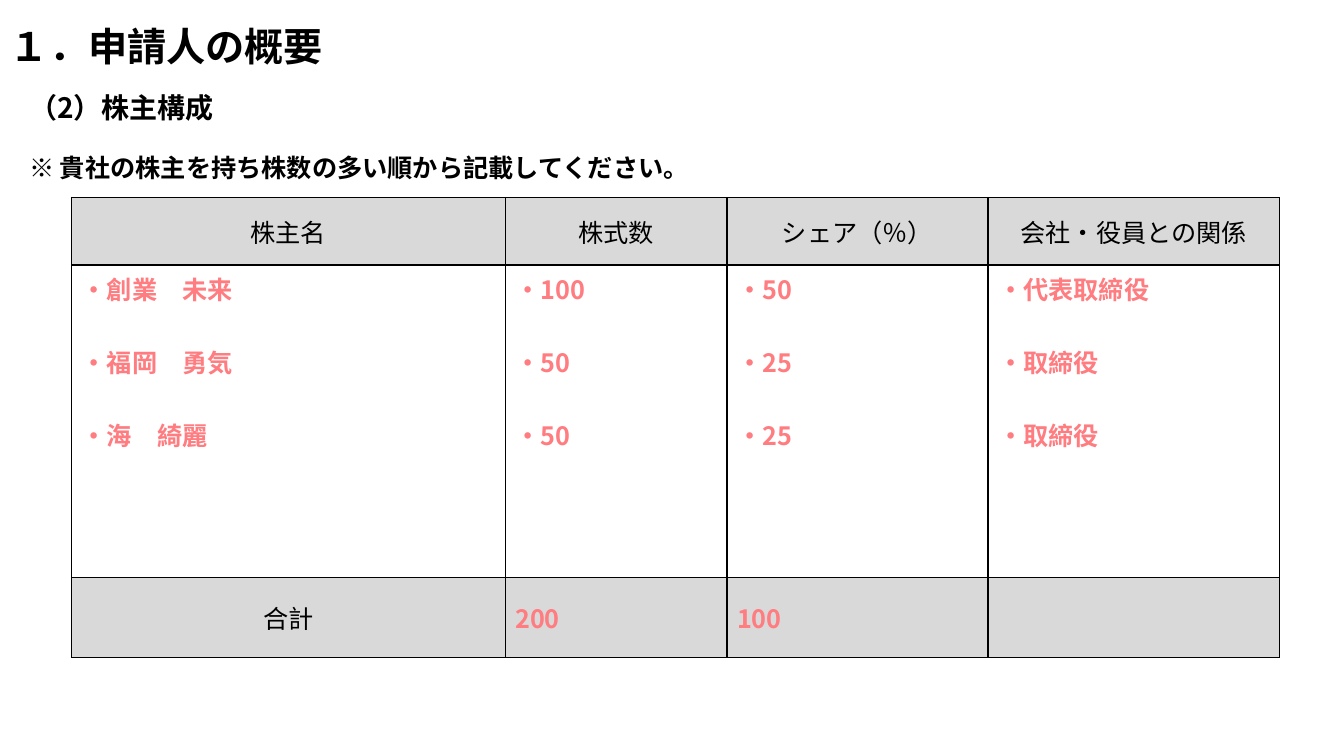
from lxml.etree import SubElement
from pptx import Presentation
from pptx.dml.color import RGBColor
from pptx.enum.text import MSO_ANCHOR, PP_ALIGN
from pptx.oxml.ns import qn
from pptx.util import Inches, Pt

FONT = "Noto Sans CJK JP"
COLORS = {"ink": "000000", "entry": "FF7C80", "band": "D9D9D9"}

TITLE = "１．申請人の概要"
SUBTITLE = "（2）株主構成"
INSTRUCTION = "※ 貴社の株主を持ち株数の多い順から記載してください。"
HEADERS = ["株主名", "株式数", "シェア（％）", "会社・役員との関係"]
SHAREHOLDERS = [
    ("創業　未来", "100", "50", "代表取締役"),
    ("福岡　勇気", "50", "25", "取締役"),
    ("海　綺麗", "50", "25", "取締役"),
]
TOTALS = ["合計", "200", "100", ""]
COLUMN_WIDTHS = [4.3, 2.2, 2.59, 2.89]
ROW_HEIGHTS = [0.67, 3.1, 0.79]


def write(frame, lines, size, color, bold, align=PP_ALIGN.LEFT, gap=0):
    for index, line in enumerate(lines):
        paragraph = frame.paragraphs[0] if index == 0 else frame.add_paragraph()
        paragraph.text = line
        paragraph.alignment = align
        if index:
            paragraph.space_before = Pt(gap)
        font = paragraph.font
        font.name, font.size, font.bold = FONT, Pt(size), bold
        font.color.rgb = RGBColor.from_string(COLORS[color])
        for run in paragraph.runs:
            run.font.name = FONT
            SubElement(run.font._element, qn("a:ea"), typeface=FONT)


def add_heading(slide, left, top, width, height, anchor):
    frame = slide.shapes.add_textbox(
        Inches(left), Inches(top), Inches(width), Inches(height)).text_frame
    frame.word_wrap = True
    frame.vertical_anchor = anchor
    return frame


def draw_borders(cell):
    properties = cell._tc.get_or_add_tcPr()
    for index, side in enumerate(("lnL", "lnR", "lnT", "lnB")):
        border = properties.makeelement(qn(f"a:{side}"), {"w": str(Pt(1))})
        fill = SubElement(border, qn("a:solidFill"))
        SubElement(fill, qn("a:srgbClr"), val=COLORS["ink"])
        properties.insert(index, border)


def add_shareholder_table(slide):
    table = slide.shapes.add_table(
        len(ROW_HEIGHTS), len(COLUMN_WIDTHS), Inches(0.71), Inches(1.96),
        Inches(sum(COLUMN_WIDTHS)), Inches(sum(ROW_HEIGHTS))).table
    table.first_row = table.horz_banding = False
    for column, width in zip(table.columns, COLUMN_WIDTHS):
        column.width = Inches(width)
    for row, height in zip(table.rows, ROW_HEIGHTS):
        row.height = Inches(height)

    entries = [[f"・{value}" for value in field] for field in zip(*SHAREHOLDERS)]
    rows = [[[header] for header in HEADERS], entries, [[total] for total in TOTALS]]
    for r, row in enumerate(rows):
        for c, lines in enumerate(row):
            cell = table.cell(r, c)
            is_body = r == 1
            is_label = r == 0 or (r == 2 and c == 0)
            if is_body:
                cell.fill.background()
            else:
                cell.fill.solid()
                cell.fill.fore_color.rgb = RGBColor.from_string(COLORS["band"])
                cell.vertical_anchor = MSO_ANCHOR.MIDDLE
            draw_borders(cell)
            write(cell.text_frame, lines, 18, "ink" if is_label else "entry",
                  not is_label, PP_ALIGN.CENTER if is_label else PP_ALIGN.LEFT, 26)


def main():
    presentation = Presentation()
    presentation.slide_width = Inches(13.33)
    presentation.slide_height = Inches(7.5)
    slide = presentation.slides.add_slide(presentation.slide_layouts[6])

    add_shareholder_table(slide)

    section = add_heading(slide, 0.19, 0.85, 11.5, 1.11, MSO_ANCHOR.TOP)
    write(section, [SUBTITLE, INSTRUCTION], 20, "ink", True, gap=20)
    section.paragraphs[1].font.size = Pt(18)

    title = add_heading(slide, 0, -0.01, 11.5, 0.99, MSO_ANCHOR.MIDDLE)
    write(title, [TITLE], 28, "ink", True)
    title.paragraphs[0].line_spacing = 0.9

    presentation.save("out.pptx")


if __name__ == "__main__":
    main()
